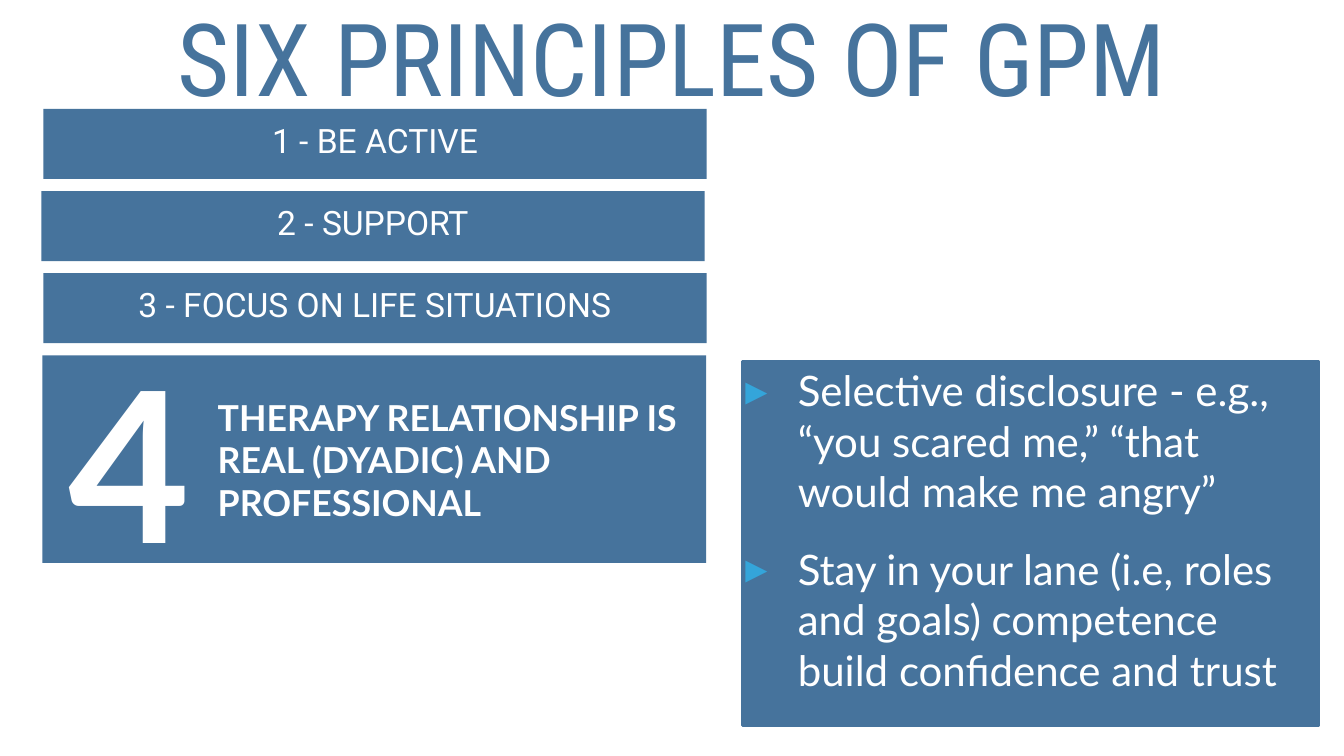
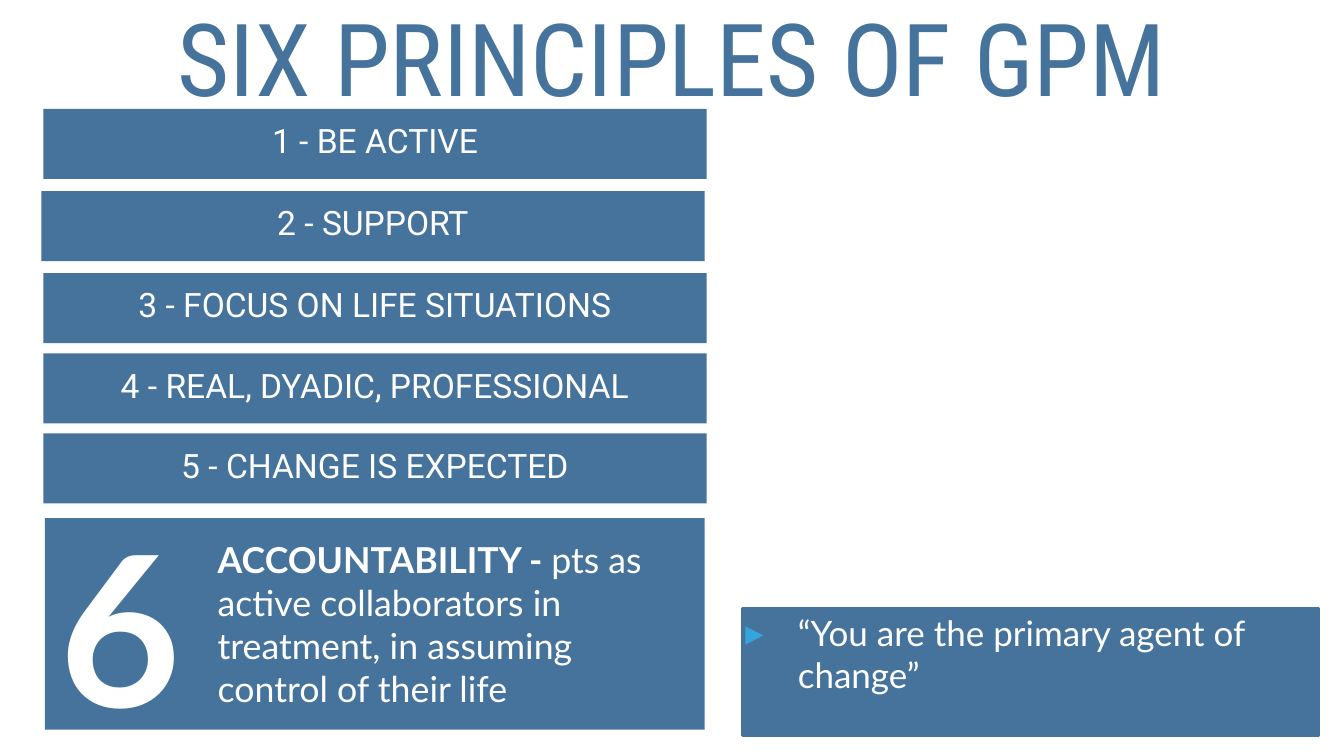
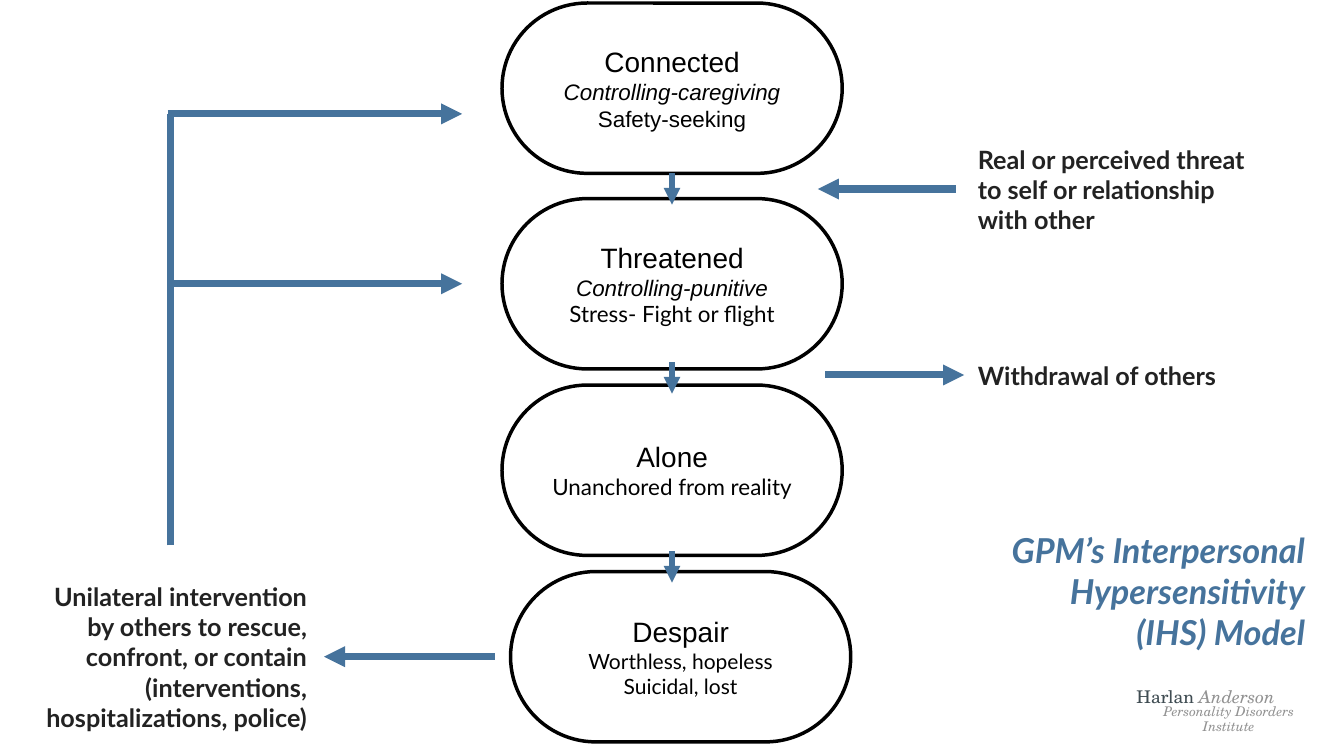
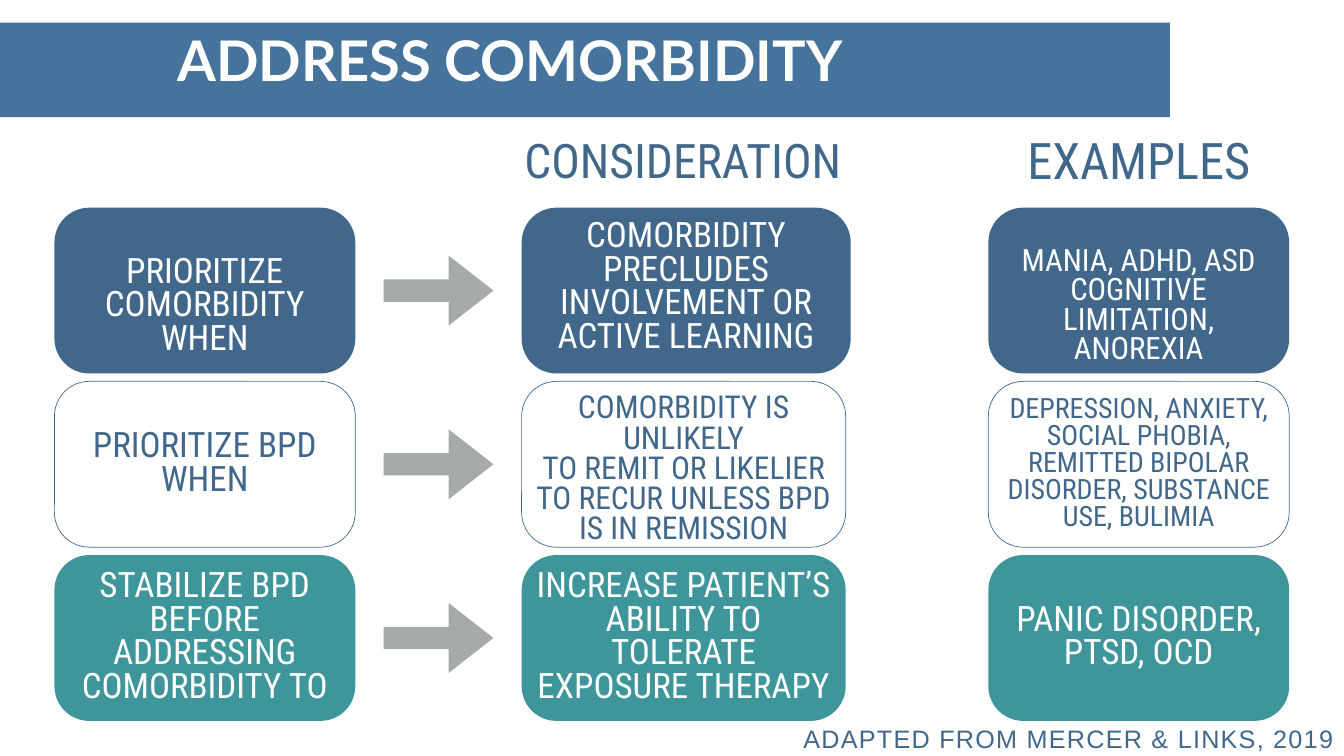
import dataclasses
import typing

import pptx
import pptx.dml.color
import pptx.enum.shapes
import pptx.enum.text
import pptx.oxml
import pptx.oxml.ns
import pptx.util

SHAPES = pptx.enum.shapes.MSO_SHAPE
ALIGN = pptx.enum.text.PP_ALIGN
ANCHOR = pptx.enum.text.MSO_ANCHOR

# Grid: 80 columns by 45 rows of square cells
WIDTH, HEIGHT = pptx.util.Inches(26.67), pptx.util.Inches(15)
COLUMNS, ROWS = 80, 45

# Palette
BLUE, SLATE, TEAL, SKY = "46739C", "41688B", "3F969A", "34A5DA"
WHITE, BLACK, INK = "FFFFFF", "000000", "222222"
GREY, SILVER, CHARCOAL = "A6AAA9", "929292", "3F4C52"


class Area(typing.NamedTuple):
    column: float
    row: float
    width: float
    height: float


class Padding(typing.NamedTuple):
    left: float = 0.18
    top: float = 0.18
    right: float = 0.18
    bottom: float = 0.18


@dataclasses.dataclass(frozen=True)
class Look:
    font: str
    size: float
    colour: str = WHITE
    bold: bool = False
    italic: bool = False
    tracking: float = 0


@dataclasses.dataclass(frozen=True)
class Layout:
    align: typing.Any = ALIGN.CENTER
    anchor: typing.Any = ANCHOR.MIDDLE
    leading: float = 1.0
    padding: Padding = Padding()
    bulleted: bool = False


@dataclasses.dataclass(frozen=True)
class Skin:
    fill: str | None = None
    line: str | None = None
    weight: float = 0


class Span(typing.NamedTuple):
    text: str
    look: Look


class Arrow(typing.NamedTuple):
    start: tuple[float, float]
    end: tuple[float, float]
    weight: float = 10
    pointed: bool = True


Lines = list[list[Span]]

# Shared text and box styles
TITLE = Look("Roboto Condensed", 144, BLUE)
BAR = Look("Roboto", 48)
PANEL = Look("Lato", 51)
NUMERAL = Look("Lato", 300, bold=True)
STATE = Look("Arial", 40, BLACK)
REMARK = Look("Lato", 36, INK, bold=True)
CARD = Look("Roboto Condensed", 50)

CENTRED = Layout()
TIGHT = Layout(leading=0.8)
TIGHT_TOP = Layout(leading=0.8, anchor=ANCHOR.TOP)
TIGHT_BOTTOM = Layout(leading=0.8, anchor=ANCHOR.BOTTOM)
LEFT = Layout(align=ALIGN.LEFT)
RIGHT = Layout(align=ALIGN.RIGHT)
ROOMY = Layout(align=ALIGN.LEFT, padding=Padding(0.24, 0.24, 0.24, 0.24))
LOWERED = Layout(leading=0.8, padding=Padding(top=2.1))
BULLETS = Layout(align=ALIGN.LEFT, anchor=ANCHOR.TOP, bulleted=True)

BLUE_BOX = Skin(BLUE)
NOTE_BOX = Skin(BLUE, BLUE, 4)
PILL = Skin(WHITE, BLACK, 5)
CLEAR = Skin()


def across(count: float) -> pptx.util.Emu:
    return pptx.util.Emu(round(WIDTH * count / COLUMNS))


def down(count: float) -> pptx.util.Emu:
    return pptx.util.Emu(round(HEIGHT * count / ROWS))


def rgb(code: str) -> pptx.dml.color.RGBColor:
    return pptx.dml.color.RGBColor.from_string(code)


def place(area: Area) -> tuple:
    return across(area.column), down(area.row), across(area.width), down(area.height)


def element(tag: str, **attributes: str):
    node = pptx.oxml.ns.qn(tag)
    created = pptx.oxml.parse_xml(f'<{tag} {pptx.oxml.ns.nsdecls("a")}/>')
    assert created.tag == node
    for key, value in attributes.items():
        created.set(key, value)
    return created


def add_bullet(paragraph) -> None:
    properties = paragraph._p.get_or_add_pPr()
    properties.set("marL", str(across(3.12)))
    properties.set("indent", str(-across(3.12)))
    colour = element("a:buClr")
    colour.append(element("a:srgbClr", val=SKY))
    properties.append(colour)
    properties.append(element("a:buSzPct", val="105000"))
    properties.append(element("a:buFont", typeface="Arial"))
    properties.append(element("a:buChar", char="▸"))


def plain(look: Look, *texts: str) -> Lines:
    return [[Span(text, look)] for text in texts]


def write(box, lines: Lines, layout: Layout) -> None:
    frame = box.text_frame
    frame.word_wrap = True
    frame.vertical_anchor = layout.anchor
    frame.margin_left, frame.margin_right = across(layout.padding.left), across(layout.padding.right)
    frame.margin_top, frame.margin_bottom = down(layout.padding.top), down(layout.padding.bottom)
    for index, line in enumerate(lines):
        paragraph = frame.add_paragraph() if index else frame.paragraphs[0]
        paragraph.alignment = layout.align
        paragraph.line_spacing = layout.leading
        if layout.bulleted:
            if index:
                paragraph.space_before = pptx.util.Pt(39)
            add_bullet(paragraph)
        for span in line:
            run = paragraph.add_run()
            run.text = span.text
            look = span.look
            run.font.name, run.font.size = look.font, pptx.util.Pt(look.size)
            run.font.bold, run.font.italic = look.bold, look.italic
            run.font.color.rgb = rgb(look.colour)
            if look.tracking:
                run._r.get_or_add_rPr().set("spc", str(round(look.tracking * 100)))


def add_box(page, area: Area, skin: Skin, lines: Lines | None = None, layout: Layout = CENTRED,
            kind=SHAPES.RECTANGLE, adjust: tuple[float, ...] = ()) -> None:
    box = page.shapes.add_shape(kind, *place(area))
    box.shadow.inherit = False
    for index, value in enumerate(adjust):
        box.adjustments[index] = value
    if skin.fill:
        box.fill.solid()
        box.fill.fore_color.rgb = rgb(skin.fill)
    else:
        box.fill.background()
    if skin.line:
        box.line.color.rgb = rgb(skin.line)
        box.line.width = pptx.util.Pt(skin.weight)
    else:
        box.line.fill.background()
    if lines:
        write(box, lines, layout)


def add_rounded(page, area: Area, skin: Skin, lines: Lines, layout: Layout, radius: float) -> None:
    add_box(page, area, skin, lines, layout, SHAPES.ROUNDED_RECTANGLE, (radius,))


def add_text(page, area: Area, lines: Lines, layout: Layout) -> None:
    write(page.shapes.add_textbox(*place(area)), lines, layout)


def add_arrow(page, arrow: Arrow) -> None:
    (x1, y1), (x2, y2) = arrow.start, arrow.end
    connector = page.shapes.add_connector(
        pptx.enum.shapes.MSO_CONNECTOR.STRAIGHT, across(x1), down(y1), across(x2), down(y2))
    connector.line.color.rgb = rgb(BLUE)
    connector.line.width = pptx.util.Pt(arrow.weight)
    if arrow.pointed:
        connector.line._get_or_add_ln().append(element("a:tailEnd", type="triangle"))
    connector._element.spPr.append(element("a:effectLst"))


# Principles slides
PRINCIPLES = ["1 - BE ACTIVE", "2 - SUPPORT", "3 - FOCUS ON LIFE SITUATIONS",
              "4 - REAL, DYADIC, PROFESSIONAL", "5 - CHANGE IS EXPECTED"]


@dataclasses.dataclass(frozen=True)
class Principle:
    number: str
    panel: Area
    wording_area: Area
    number_area: Area
    wording: Lines
    note_area: Area
    notes: Lines


def bar_area(index: int) -> Area:
    row = 6.48 + 4.89 * index if index < 3 else 21.03 + 4.77 * (index - 3)
    return Area(2.46 if index == 1 else 2.58, row, 39.48, 4.17)


def principle_slide(page, principle: Principle) -> None:
    add_text(page, Area(0, 0.75, 80, 6.48), plain(TITLE, "SIX PRINCIPLES OF GPM"), TIGHT)
    for index, name in enumerate(PRINCIPLES[:int(principle.number) - 1]):
        add_box(page, bar_area(index), BLUE_BOX, plain(BAR, name), TIGHT)
    add_box(page, principle.panel, BLUE_BOX)
    add_box(page, principle.wording_area, BLUE_BOX, principle.wording, ROOMY)
    add_text(page, principle.number_area, plain(NUMERAL, principle.number), LEFT)
    add_box(page, principle.note_area, NOTE_BOX, principle.notes, BULLETS)


PANEL_BOLD = dataclasses.replace(PANEL, bold=True)
FOURTH = Principle(
    "4", Area(2.52, 21.15, 39.51, 12.36), Area(12.72, 22.83, 29.1, 9.06),
    Area(3.9, 21.15, 8.34, 12.36),
    plain(PANEL_BOLD, "THERAPY RELATIONSHIP IS REAL (DYADIC) AND PROFESSIONAL"),
    Area(44.19, 21.54, 34.32, 21.63),
    plain(Look("Lato", 60),
          "Selective disclosure - e.g., “you scared me,” “that would make me angry”",
          "Stay in your lane (i.e, roles and goals) competence build confidence and trust"))
SIXTH = Principle(
    "6", Area(2.67, 30.84, 39.27, 12.6), Area(12.72, 30.99, 27.75, 12.3),
    Area(3.39, 29.25, 8.28, 15.75),
    [[Span("ACCOUNTABILITY - ", PANEL_BOLD),
      Span("pts as active collaborators in treatment, in assuming control of their life", PANEL)]],
    Area(44.19, 36.21, 34.32, 7.56),
    plain(Look("Lato", 50), "“You are the primary agent of change”"))


# Interpersonal model slide
def model_slide(page) -> None:
    detail = dataclasses.replace(STATE, size=32)
    slanted = dataclasses.replace(detail, italic=True)
    lato = dataclasses.replace(detail, font="Lato")
    small = dataclasses.replace(lato, size=30)
    states = [
        (Area(29.88, 0.18, 20.25, 10.14), "Connected",
         [Span("Controlling-caregiving", slanted), Span("Safety-seeking", detail)]),
        (Area(29.88, 11.82, 20.25, 10.14), "Threatened",
         [Span("Controlling-punitive", slanted), Span("Stress- Fight or flight", lato)]),
        (Area(29.88, 22.92, 20.25, 10.14), "Alone", [Span("Unanchored from reality", lato)]),
        (Area(30.39, 34.02, 20.25, 10.14), "Despair",
         [Span("Worthless, hopeless", small), Span("Suicidal, lost", small)]),
    ]
    for area, name, details in states:
        lines = plain(STATE, name) + [[span] for span in details]
        add_rounded(page, area, PILL, lines, CENTRED, 0.5)

    # Steps between the states
    for step in range(3):
        top = 10.32 + 11.25 * step
        add_arrow(page, Arrow((40, top), (40, top + 1.86), 8))

    # Influences from both sides
    for arrow in (Arrow((56.88, 11.25), (48.69, 11.25)),
                  Arrow((49.11, 22.32), (57.39, 22.32)),
                  Arrow((29.46, 39.09), (19.29, 39.09)),
                  Arrow((9.99, 6.78), (27.51, 6.78)),
                  Arrow((10.17, 32.46), (10.17, 6.81), pointed=False),
                  Arrow((9.99, 16.89), (27.51, 16.89))):
        add_arrow(page, arrow)
    for area, text, layout in (
            (Area(58.02, 8.37, 16.95, 5.79),
             "Real or perceived threat to self or relationship with other", LEFT),
            (Area(58.02, 21.24, 16.95, 2.16), "Withdrawal of others", LEFT),
            (Area(1.17, 33.45, 17.28, 11.28),
             "Unilateral intervention by others to rescue, confront, or contain "
             "(interventions, hospitalizations, police)", RIGHT)):
        add_text(page, area, plain(REMARK, text), layout)

    # Model name and institute
    add_text(page, Area(57.6, 31.29, 20.25, 7.77),
             plain(Look("Lato", 49, BLUE, True, True),
                   "GPM’s Interpersonal Hypersensitivity", "(IHS) Model"), RIGHT)
    institute = Look("TeX Gyre Schola", 25, CHARCOAL)
    second = dataclasses.replace(institute, colour=SILVER, italic=True)
    add_text(page, Area(67.47, 40.56, 9.87, 1.77),
             [[Span("Harlan ", institute), Span("Anderson", second)]], LEFT)
    add_text(page, Area(67.47, 42.18, 11.34, 1.2),
             plain(dataclasses.replace(second, size=19), "Personality Disorders Institute"), CENTRED)


# Comorbidity slide
class Card(typing.NamedTuple):
    texts: tuple[str, ...]
    size: float = 50
    layout: Layout = TIGHT


CARD_COLUMNS = [(3.24, 17.91), (31.05, 19.29), (58.83, 17.91)]
CARD_ROWS = [
    (Skin(SLATE), WHITE, [
        Card(("PRIORITIZE COMORBIDITY WHEN",), layout=LOWERED),
        Card(("COMORBIDITY PRECLUDES INVOLVEMENT OR ACTIVE LEARNING",), layout=TIGHT_TOP),
        Card(("MANIA, ADHD, ASD", "COGNITIVE LIMITATION, ANOREXIA"), 44, LOWERED)]),
    (Skin(WHITE, SLATE, 1), SLATE, [
        Card(("PRIORITIZE BPD WHEN",)),
        Card(("COMORBIDITY IS UNLIKELY",
              "TO REMIT OR LIKELIER TO RECUR UNLESS BPD IS IN REMISSION"), 45, TIGHT_TOP),
        Card(("DEPRESSION, ANXIETY, SOCIAL PHOBIA, REMITTED BIPOLAR DISORDER, "
              "SUBSTANCE USE, BULIMIA",), 40)]),
    (Skin(TEAL), WHITE, [
        Card(("STABILIZE BPD BEFORE ADDRESSING COMORBIDITY TO",)),
        Card(("INCREASE PATIENT’S ABILITY TO TOLERATE EXPOSURE THERAPY",)),
        Card(("PANIC DISORDER, PTSD, OCD",))]),
]


def comorbidity_slide(page) -> None:
    # Title band
    add_box(page, Area(0, 1.35, 69.63, 5.62), BLUE_BOX,
            plain(Look("Lato", 80, bold=True), "ADDRESS COMORBIDITY"),
            Layout(anchor=ANCHOR.TOP, padding=Padding(0, 0.15, 8.9, 0.15)))

    # Column headings
    for area, text, size in ((Area(29.67, 8.04, 21.96, 3.87), "CONSIDERATION", 68),
                             (Area(57.45, 8.13, 20.67, 3.87), "EXAMPLES", 72)):
        heading = dataclasses.replace(CARD, size=size, colour=SLATE)
        add_rounded(page, area, CLEAR, plain(heading, text), TIGHT_BOTTOM, 0.5)

    # Cards and row arrows
    for index, (skin, colour, cards) in enumerate(CARD_ROWS):
        top = 12.36 + 10.34 * index
        for (column, width), card in zip(CARD_COLUMNS, cards):
            look = dataclasses.replace(CARD, size=card.size, colour=colour)
            if index == 0 and column == CARD_COLUMNS[1][0]:
                width += 0.3
            add_rounded(page, Area(column, top, width, 9.87), skin,
                        plain(look, *card.texts), card.layout, 0.21)
        add_box(page, Area(22.83, top + 2.85, 6.54, 4.17), Skin(GREY),
                kind=SHAPES.RIGHT_ARROW, adjust=(0.32, 0.64))

    # Source line
    add_text(page, Area(10.83, 43.17, 68.76, 1.83),
             plain(Look("Arial", 36, SLATE, tracking=1.8), "ADAPTED FROM MERCER & LINKS, 2019"),
             Layout(align=ALIGN.RIGHT, anchor=ANCHOR.BOTTOM, leading=0.8))


def main() -> None:
    deck = pptx.Presentation()
    deck.slide_width, deck.slide_height = WIDTH, HEIGHT
    pages = [deck.slides.add_slide(deck.slide_layouts[6]) for _ in range(4)]
    principle_slide(pages[0], FOURTH)
    principle_slide(pages[1], SIXTH)
    model_slide(pages[2])
    comorbidity_slide(pages[3])
    deck.save("out.pptx")


if __name__ == "__main__":
    main()
